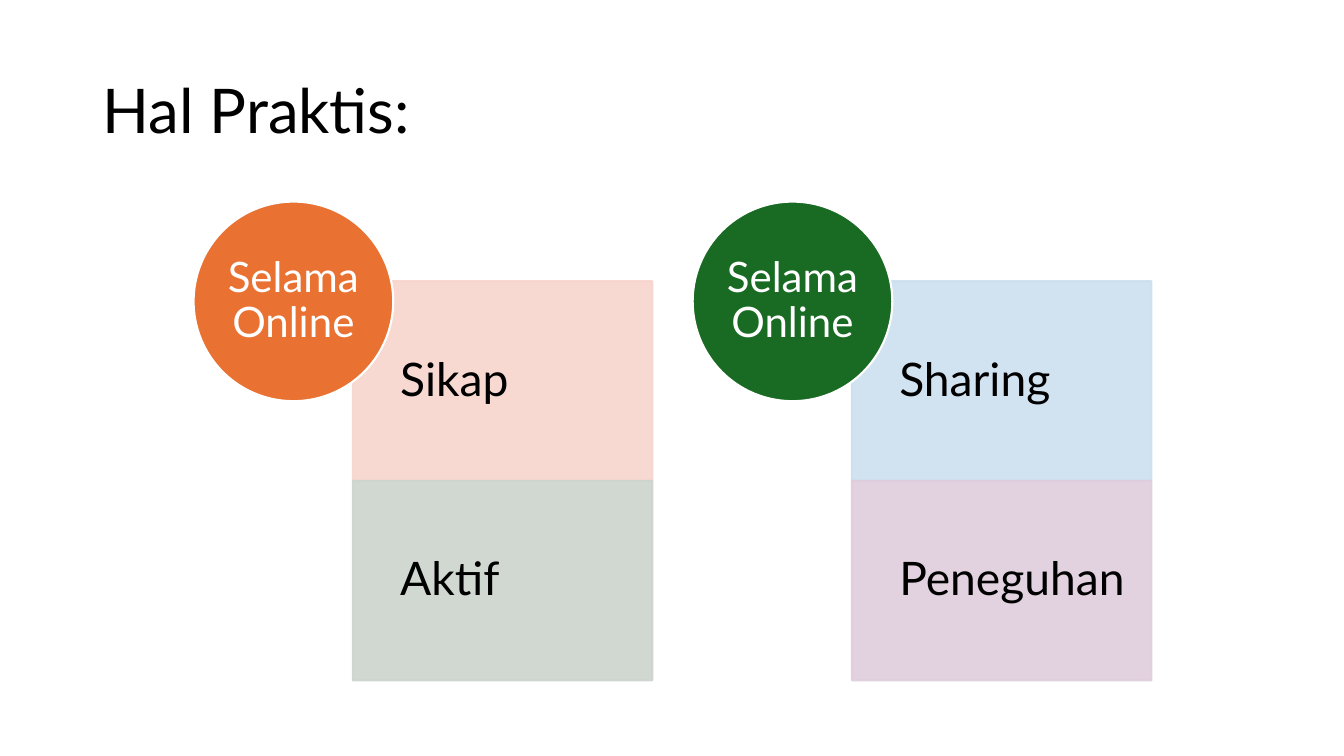
from pptx import Presentation
from pptx.dml.color import RGBColor
from pptx.enum import shapes, text
from pptx.oxml import ns
from pptx.util import Inches, Pt
from lxml import etree

BLACK = RGBColor(0x00, 0x00, 0x00)
WHITE = RGBColor(0xFF, 0xFF, 0xFF)
ORANGE = RGBColor(0xE9, 0x71, 0x32)
GREEN = RGBColor(0x19, 0x6B, 0x24)
PINK = RGBColor(0xF7, 0xD5, 0xCE)
SAGE = RGBColor(0xCC, 0xD4, 0xCD)
SKY = RGBColor(0xCC, 0xDF, 0xEF)
MAUVE = RGBColor(0xDF, 0xCD, 0xDC)


def write(shape, words, size, color, align, insets):
    frame = shape.text_frame
    frame.word_wrap = True
    frame.vertical_anchor = text.MSO_ANCHOR.MIDDLE
    frame.margin_left, frame.margin_top, frame.margin_right, frame.margin_bottom = map(Inches, insets)
    paragraph = frame.paragraphs[0]
    paragraph.text = words
    paragraph.alignment = align
    paragraph.line_spacing = 0.9
    paragraph.font.name = "Lato"
    paragraph.font.size = Pt(size)
    paragraph.font.color.rgb = color


def add_block(kind, left, top, width, height, fill, line):
    shape = slide.shapes.add_shape(kind, Inches(left), Inches(top), Inches(width), Inches(height))
    shape.shadow.inherit = False
    shape.fill.solid()
    shape.fill.fore_color.rgb = fill
    shape.line.color.rgb = line
    shape.line.width = Pt(1.5)
    return shape


presentation = Presentation()
presentation.slide_width = Inches(13.33)
presentation.slide_height = Inches(7.5)
slide = presentation.slides.add_slide(presentation.slide_layouts[6])

# Title
title = slide.shapes.add_textbox(Inches(0.92), Inches(0.4), Inches(11.5), Inches(1.45))
write(title, "Hal Praktis:", 44, BLACK, text.PP_ALIGN.LEFT, (0.1, 0.05, 0.1, 0.05))

# Two groups: stacked cards with a circle over the top left corner
SIZE = 1.98
groups = [
    (1.92, ORANGE, [("Sikap", PINK), ("Aktif", SAGE)]),
    (6.87, GREEN, [("Sharing", SKY), ("Peneguhan", MAUVE)]),
]
for left, circle_color, cards in groups:
    for row, (label, color) in enumerate(cards):
        card = add_block(shapes.MSO_SHAPE.RECTANGLE, left + 1.58, 2.79 + row * SIZE,
                         2.97, SIZE, color, color)
        # 90 % opacity on fill and outline
        for color_element in card._element.spPr.iter(ns.qn("a:srgbClr")):
            etree.SubElement(color_element, ns.qn("a:alpha"), val="90000")
        write(card, label, 33, BLACK, text.PP_ALIGN.LEFT, (0.47, 0.26, 0.2, 0.26))

    circle = add_block(shapes.MSO_SHAPE.OVAL, left, 2, SIZE, SIZE, circle_color, WHITE)
    write(circle, "Selama Online", 30, WHITE, text.PP_ALIGN.CENTER, (0, 0, 0, 0))

presentation.save("out.pptx")
